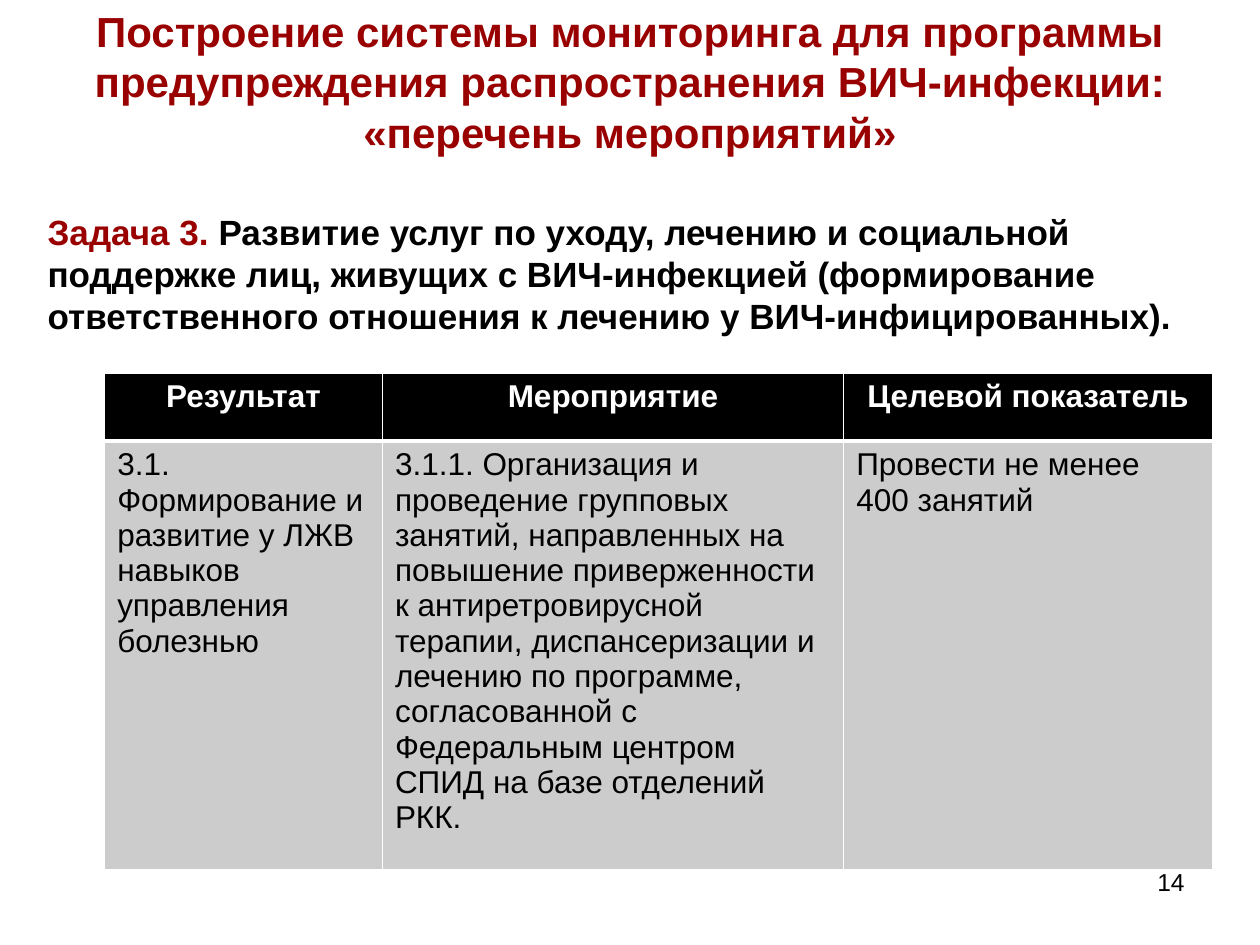
"""Build the slide on monitoring an HIV prevention programme."""
import pptx
import pptx.dml.color
import pptx.enum.text
import pptx.oxml.ns
import pptx.util
from lxml import etree

Cm = pptx.util.Cm
Pt = pptx.util.Pt
PP_ALIGN = pptx.enum.text.PP_ALIGN
MSO_ANCHOR = pptx.enum.text.MSO_ANCHOR
DARK_RED = pptx.dml.color.RGBColor(0x99, 0x00, 0x00)
BLACK = pptx.dml.color.RGBColor(0x00, 0x00, 0x00)
WHITE = pptx.dml.color.RGBColor(0xFF, 0xFF, 0xFF)
GREY = pptx.dml.color.RGBColor(0xCC, 0xCC, 0xCC)


def format_run(run, size, color, bold=False):
    run.font.name = "Arial"
    run.font.size = Pt(size)
    run.font.bold = bold
    run.font.color.rgb = color


def add_border(cell, side, width):
    properties = cell._tc.get_or_add_tcPr()
    line = etree.SubElement(properties, pptx.oxml.ns.qn(f"a:ln{side}"), w=str(Pt(width)))
    fill = etree.SubElement(line, pptx.oxml.ns.qn("a:solidFill"))
    etree.SubElement(fill, pptx.oxml.ns.qn("a:srgbClr"), val=str(WHITE))


presentation = pptx.Presentation()
presentation.slide_width = Cm(25.4)
presentation.slide_height = Cm(19.05)
slide = presentation.slides.add_slide(presentation.slide_layouts[5])

heading = slide.shapes.title
heading.left, heading.top, heading.width, heading.height = Cm(1.27), Cm(0.33), Cm(22.86), Cm(3.6)
heading.text_frame.text = (
    "Построение системы мониторинга для программы предупреждения "
    "распространения ВИЧ-инфекции:\v«перечень мероприятий»"
)
heading.text_frame.auto_size = pptx.enum.text.MSO_AUTO_SIZE.NONE
heading.text_frame.vertical_anchor = MSO_ANCHOR.MIDDLE
heading.text_frame.margin_bottom = Cm(1.12)
heading.text_frame.paragraphs[0].alignment = PP_ALIGN.CENTER
for run in heading.text_frame.paragraphs[0].runs:
    format_run(run, 24, DARK_RED, True)

objective = slide.shapes.add_textbox(Cm(0.71), Cm(4.11), Cm(24), Cm(2.82)).text_frame
objective.word_wrap = True
objective_parts = [
    ("Задача 3. ", DARK_RED),
    ("Развитие услуг по уходу, лечению и социальной поддержке лиц, живущих с "
     "ВИЧ-инфекцией (формирование ответственного отношения к лечению у "
     "ВИЧ-инфицированных).", BLACK),
]
for wording, color in objective_parts:
    run = objective.paragraphs[0].add_run()
    run.text = wording
    format_run(run, 20, color, True)

activity_rows = [
    ["Результат", "Мероприятие", "Целевой показатель"],
    ["3.1. Формирование и развитие у ЛЖВ навыков управления болезнью",
     "3.1.1. Организация и проведение групповых занятий, направленных на "
     "повышение приверженности к антиретровирусной терапии, диспансеризации и "
     "лечению по программе, согласованной с Федеральным центром СПИД на базе "
     "отделений РКК.",
     "Провести не менее 400 занятий"],
]
activities = slide.shapes.add_table(2, 3, Cm(2.11), Cm(7.52), Cm(22.33), Cm(10.01)).table
for column, width in zip(activities.columns, (5.6, 9.3, 7.43)):
    column.width = Cm(width)
for row, height in zip(activities.rows, (1.37, 8.64)):
    row.height = Cm(height)
for row_index, wordings in enumerate(activity_rows):
    is_header = row_index == 0
    for column_index, wording in enumerate(wordings):
        cell = activities.cell(row_index, column_index)
        for side, width in zip("LRTB", (1, 1, 1, 3) if is_header else (1, 1, 3, 1)):
            add_border(cell, side, width)
        cell.fill.solid()
        cell.fill.fore_color.rgb = BLACK if is_header else GREY
        cell.text_frame.text = wording
        paragraph = cell.text_frame.paragraphs[0]
        paragraph.alignment = PP_ALIGN.CENTER if is_header else PP_ALIGN.LEFT
        format_run(paragraph.runs[0], 18, WHITE if is_header else BLACK, is_header)

page_number = slide.shapes.add_textbox(Cm(18.21), Cm(17.35), Cm(5.92), Cm(1.32)).text_frame
page_number.word_wrap = True
page_number.text = "14"
page_number.paragraphs[0].alignment = PP_ALIGN.RIGHT
format_run(page_number.paragraphs[0].runs[0], 14, BLACK)

presentation.save("out.pptx")
